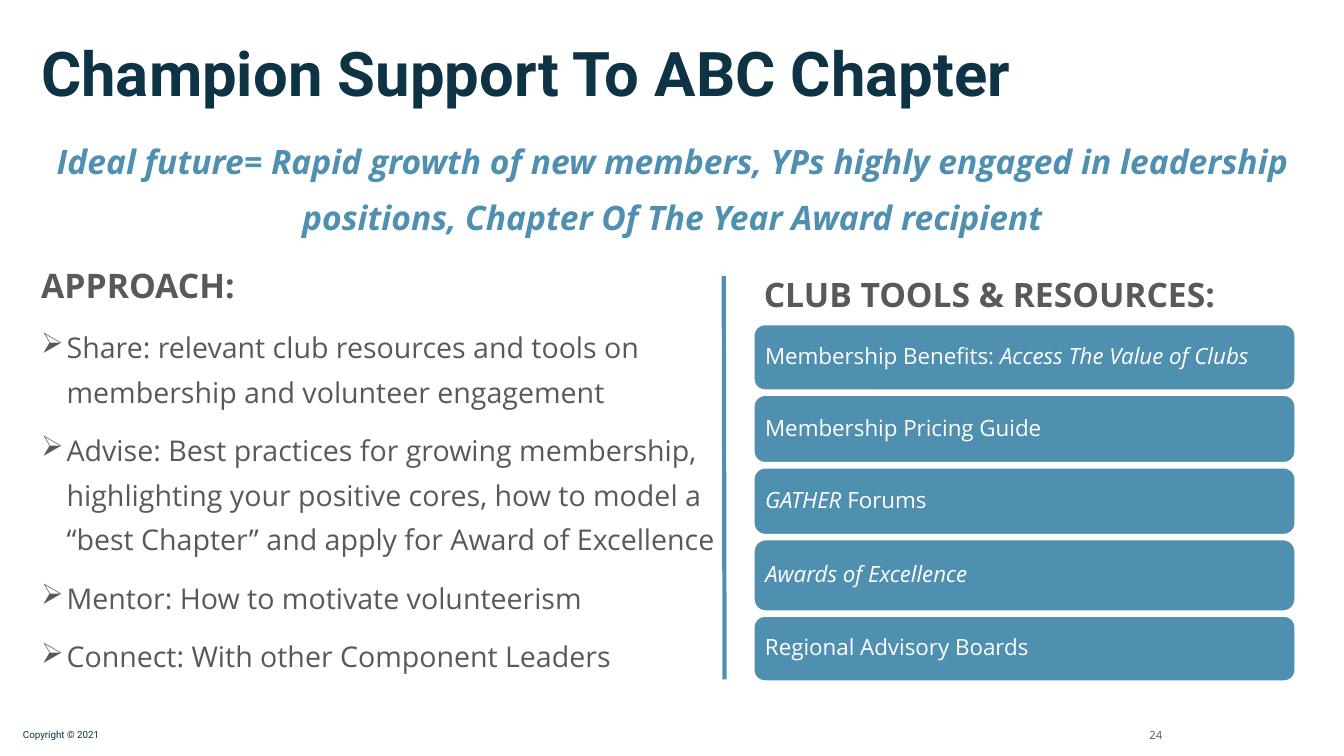
from lxml import etree
from pptx import Presentation
from pptx import util as u
from pptx.dml.color import RGBColor
from pptx.enum import shapes, text
from pptx.oxml.ns import qn

NAVY = RGBColor(0x0E, 0x33, 0x45)
BLUE = RGBColor(0x4F, 0x8F, 0xB0)
GREY = RGBColor(0x59, 0x59, 0x59)
BROWN = RGBColor(0x58, 0x4F, 0x4D)
WHITE = RGBColor(0xFF, 0xFF, 0xFF)

APPROACH = [
    "Share: relevant club resources and tools on membership and volunteer engagement",
    "Advise: Best practices for growing membership, highlighting your positive cores, "
    "how to model a “best Chapter” and apply for Award of Excellence",
    "Mentor: How to motivate volunteerism",
    "Connect: With other Component Leaders",
]
RESOURCES = [
    (1.65, [("Membership Benefits: ", False), ("Access The Value of Clubs", True)]),
    (1.7, [("Membership Pricing Guide", False)]),
    (1.68, [("GATHER", True), (" Forums", False)]),
    (1.8, [("Awards of Excellence", True)]),
    (1.63, [("Regional Advisory Boards", False)]),
]
CARD_LEFT, CARD_TOP, CARD_WIDTH, CARD_GAP = 19, 8.18, 13.64, 0.13


def write(para, content, size, color, font="Open Sans", bold=False, italic=False,
          align=text.PP_ALIGN.LEFT, spacing=1.0, before=0, bullet=None):
    para.alignment = align
    para.line_spacing = spacing
    para.space_before = u.Pt(before)
    if bullet:
        props = para._p.get_or_add_pPr()
        props.set("marL", str(u.Cm(0.64)))
        props.set("indent", str(-u.Cm(0.64)))
        etree.SubElement(props, qn("a:buChar")).set("char", bullet)
    spans = [(content, italic)] if isinstance(content, str) else content
    for words, slanted in spans:
        span = para.add_run()
        span.text = words
        span.font.name = font
        span.font.size = u.Pt(size)
        span.font.color.rgb = color
        span.font.bold = bold
        span.font.italic = slanted


class SlideBuilder:
    def __init__(self, page, accent):
        self.page = page
        self.accent = accent

    def text_box(self, left, top, width, height, content, size, color,
                 anchor=text.MSO_ANCHOR.TOP, **style):
        box = self.page.shapes.add_textbox(u.Cm(left), u.Cm(top), u.Cm(width), u.Cm(height))
        frame = box.text_frame
        frame.word_wrap = True
        frame.vertical_anchor = anchor
        write(frame.paragraphs[0], content, size, color, **style)
        return frame

    def card(self, left, top, width, height, content):
        box = self.page.shapes.add_shape(
            shapes.MSO_SHAPE.ROUNDED_RECTANGLE,
            u.Cm(left), u.Cm(top), u.Cm(width), u.Cm(height))
        box.shadow.inherit = False
        box.fill.solid()
        box.fill.fore_color.rgb = self.accent
        box.line.color.rgb = WHITE
        box.line.width = u.Pt(1)
        frame = box.text_frame
        frame.word_wrap = True
        frame.vertical_anchor = text.MSO_ANCHOR.MIDDLE
        frame.margin_left = frame.margin_right = u.Cm(0.2)
        write(frame.paragraphs[0], content, 16, WHITE, spacing=0.9)

    def divider(self, left, top, right, bottom):
        line = self.page.shapes.add_connector(
            shapes.MSO_CONNECTOR.STRAIGHT, u.Cm(left), u.Cm(top), u.Cm(right), u.Cm(bottom))
        line.line.color.rgb = self.accent
        line.line.width = u.Pt(3)
        etree.SubElement(line._element.spPr, qn("a:effectLst"))


def main():
    deck = Presentation()
    deck.slide_width, deck.slide_height = u.Cm(33.87), u.Cm(19.05)
    builder = SlideBuilder(deck.slides.add_slide(deck.slide_layouts[6]), BLUE)

    builder.text_box(0.33, 18.24, 7.8, 0.56, "Copyright © 2021", 7, NAVY, font="Roboto")
    builder.text_box(21.92, 18.24, 7.62, 0.56, "24", 8, BROWN,
                     anchor=text.MSO_ANCHOR.MIDDLE, align=text.PP_ALIGN.RIGHT)
    builder.text_box(0.79, 0.97, 27.69, 1.98, "Champion Support To ABC Chapter", 44, NAVY,
                     font="Roboto", bold=True, spacing=0.9)
    builder.text_box(0.41, 3.02, 33.07, 3.3,
                     "Ideal future= Rapid growth of new members, YPs highly engaged in "
                     "leadership positions, Chapter Of The Year Award recipient",
                     24, BLUE, bold=True, italic=True, align=text.PP_ALIGN.CENTER, spacing=1.4)

    approach = builder.text_box(0.79, 6.25, 17.48, 11.05, "APPROACH:", 24.1, GREY,
                                bold=True, spacing=1.3)
    for item in APPROACH:
        write(approach.add_paragraph(), item, 20.4, GREY, spacing=1.3, before=10, bullet="➢")

    builder.divider(18.24, 6.96, 18.26, 17.12)

    builder.text_box(CARD_LEFT, 6.27, 14.8, 2.03, "CLUB TOOLS & RESOURCES:", 24, GREY,
                     bold=True, spacing=1.5)
    top = CARD_TOP
    for height, label in RESOURCES:
        builder.card(CARD_LEFT, top, CARD_WIDTH, height, label)
        top += height + CARD_GAP

    deck.save("out.pptx")


if __name__ == "__main__":
    main()
